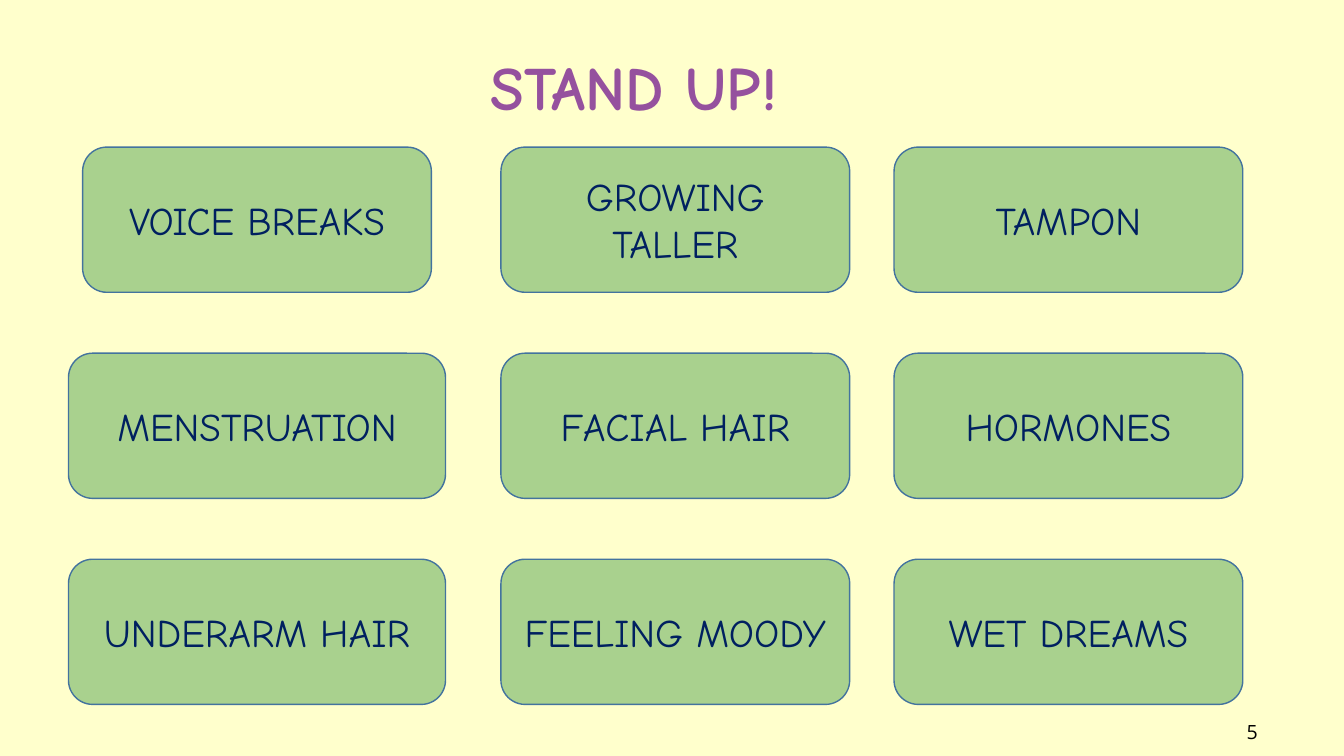
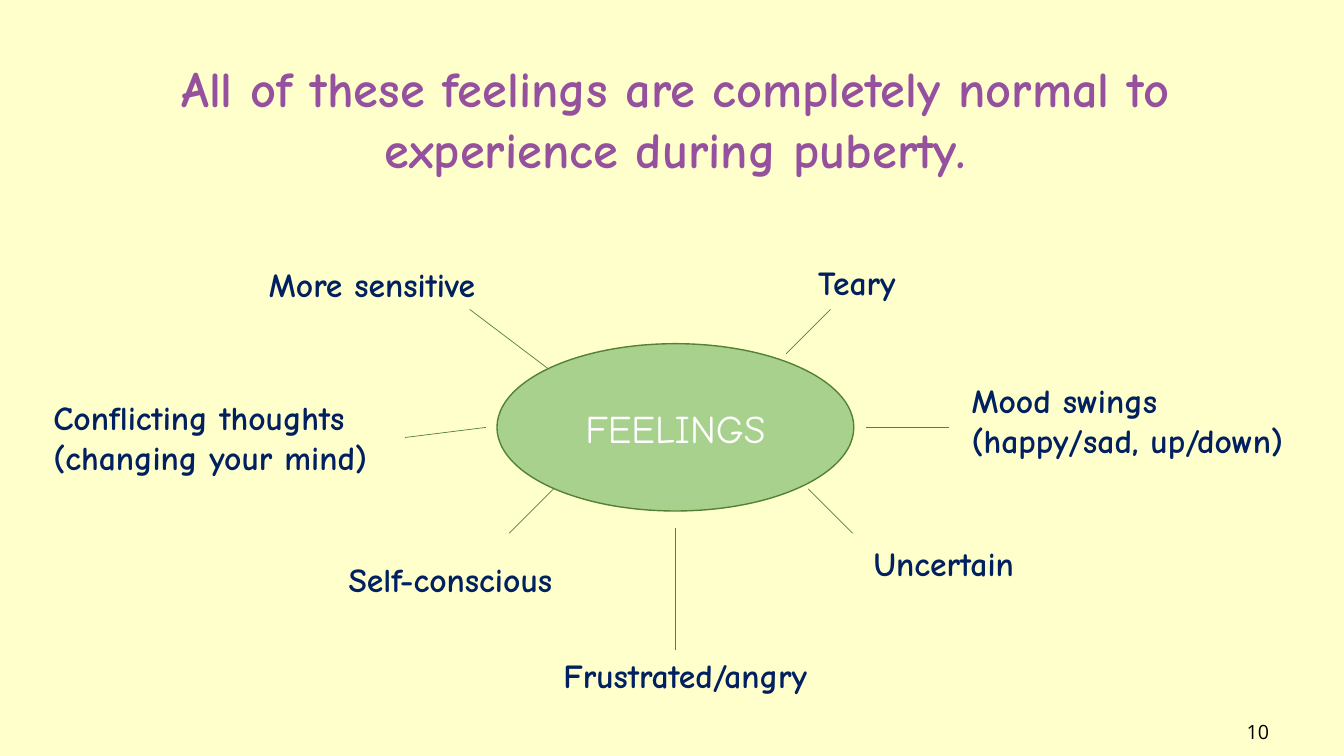
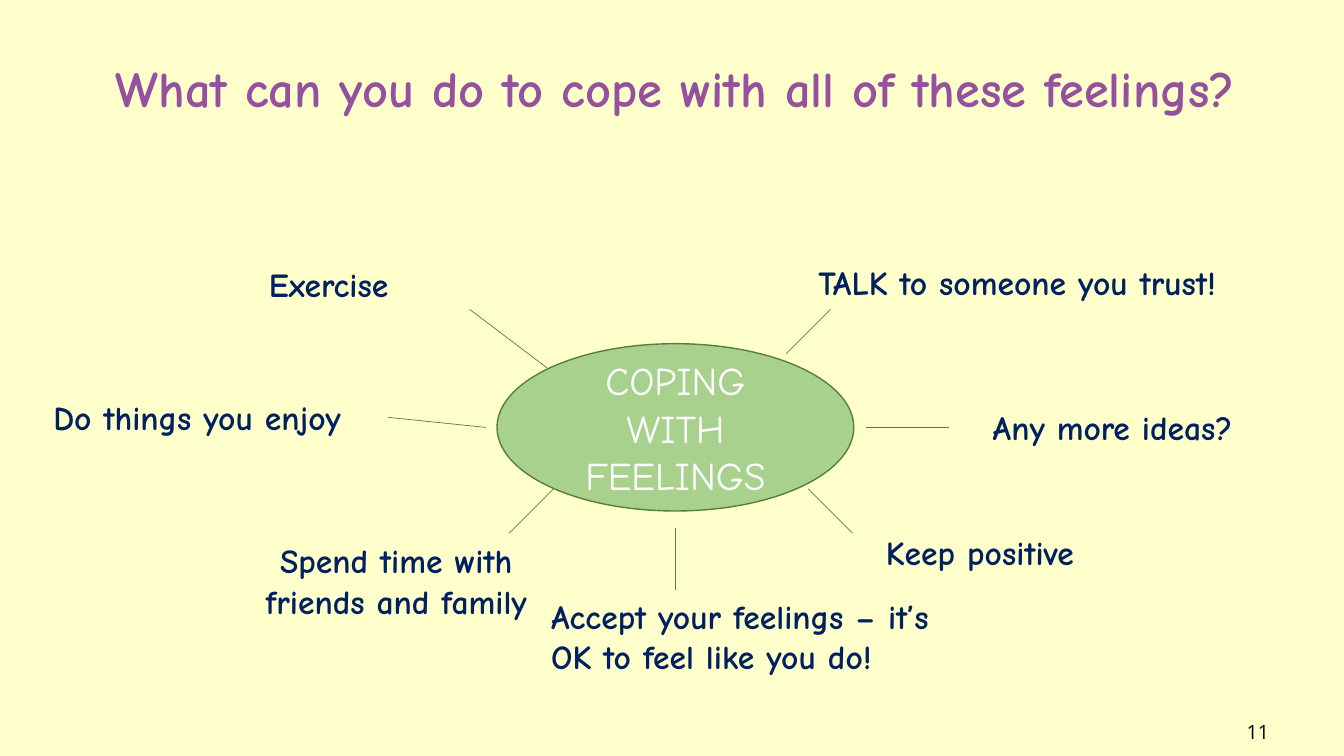
from dataclasses import dataclass

from lxml import etree
from pptx import Presentation
from pptx.dml import color
from pptx.enum import shapes, text
from pptx.oxml import ns
from pptx.util import Pt

HEADING_FONT = "Comic Neue"
NUMBER_FONT = "Open Sans"
CREAM = "FFFFCC"
PURPLE = "95519E"
NAVY = "002060"
LEAF = "A9D18E"
MOSS = "548235"
STEEL = "43739E"
WHITE = "FFFFFF"
BLACK = "000000"
LEFT = text.PP_ALIGN.LEFT
CENTER = text.PP_ALIGN.CENTER

Point = tuple[float, float]


@dataclass(frozen=True)
class Box:
    left: float
    top: float
    width: float
    height: float

    def lengths(self) -> list[Pt]:
        return [Pt(n) for n in (self.left, self.top, self.width, self.height)]


@dataclass(frozen=True)
class Style:
    size: float
    colour: str
    bold: bool = False
    font: str = HEADING_FONT
    align: text.PP_ALIGN = LEFT


@dataclass(frozen=True)
class Label:
    wording: str
    box: Box
    align: text.PP_ALIGN = LEFT


@dataclass(frozen=True)
class Spoke:
    start: Point
    end: Point


@dataclass(frozen=True)
class MindMap:
    title: str
    number: int
    hub: str
    labels: list[Label]
    left_spoke_end: Point
    bottom_spoke_end: float


QUIZ_TITLE_BOX = Box(31, 31.7, 843.8, 60.5)
MAP_TITLE_BOX = Box(60.5, 37.4, 843.8, 94.3)
NUMBER_BOX = Box(883.4, 510.5, 50.4, 28.8)
HUB_BOX = Box(355, 245.5, 254.9, 119.5)

BUTTON_TOP, BUTTON_PITCH, BUTTON_HEIGHT = 105.1, 147.2, 103.7
BUTTON_WIDTH, WIDE_BUTTON_WIDTH = 249.1, 269.3
COLUMN_CENTRES = (183.6, 482.4, 763.2)
BUTTON_ROWS = (
    ("VOICE BREAKS", "GROWING TALLER", "TAMPON"),
    ("MENSTRUATION", "FACIAL HAIR", "HORMONES"),
    ("UNDERARM HAIR", "FEELING MOODY", "WET DREAMS"),
)

SHARED_SPOKES = [
    Spoke((561.6, 252.7), (593.3, 221)),
    Spoke((391.7, 263.5), (335.5, 221)),
    Spoke((609.1, 380.9), (577.4, 349.2)),
    Spoke((363.6, 380.9), (395.3, 349.2)),
    Spoke((618.5, 305.3), (678.2, 305.3)),
]

MIND_MAPS = [
    MindMap(
        "All of these feelings are completely normal to experience during puberty.",
        10,
        "FEELINGS",
        [
            Label("More sensitive", Box(185, 185, 195, 36)),
            Label("Teary", Box(577.4, 183.6, 83.5, 36)),
            Label("Uncertain", Box(617, 384.5, 127.4, 36)),
            Label("Self-conscious", Box(241.9, 396, 185, 36)),
            Label("Mood swings\n(happy/sad, up/down)", Box(686.9, 267.8, 266.4, 65.5)),
            Label("Conflicting thoughts\n(changing your mind)", Box(31, 280, 259.2, 65.5)),
            Label("Frustrated/angry", Box(395.3, 464.4, 217.4, 36)),
        ],
        (289.4, 312.5),
        464.4,
    ),
    MindMap(
        "What can you do to cope with all of these feelings?",
        11,
        "COPING WITH FEELINGS",
        [
            Label("Exercise", Box(185, 185, 113.8, 36)),
            Label("TALK to someone you trust!", Box(577.4, 183.6, 342, 36)),
            Label("Keep positive", Box(625.7, 376.6, 167.8, 36)),
            Label("Spend time with friends and family", Box(179.3, 382.3, 207.4, 65.5), CENTER),
            Label("Any more ideas?", Box(702, 287.3, 209.5, 36)),
            Label("Do things you enjoy", Box(31, 280, 247, 36)),
            Label("Accept your feelings – it’s OK to feel like you do!", Box(386.6, 421.9, 291.6, 65.5)),
        ],
        (277.2, 298.1),
        421.2,
    ),
]


def rgb(value: str) -> color.RGBColor:
    return color.RGBColor.from_string(value)


def write(frame, wording: str, style: Style, anchor=text.MSO_ANCHOR.TOP) -> None:
    frame.text = wording
    frame.word_wrap = True
    frame.auto_size = text.MSO_AUTO_SIZE.NONE
    frame.vertical_anchor = anchor
    for paragraph in frame.paragraphs:
        paragraph.alignment = style.align
        paragraph.line_spacing = 1.0
        paragraph.font.name = style.font
        paragraph.font.size = Pt(style.size)
        paragraph.font.bold = style.bold
        paragraph.font.color.rgb = rgb(style.colour)


def add_text(slide, wording: str, box: Box, style: Style) -> None:
    write(slide.shapes.add_textbox(*box.lengths()).text_frame, wording, style)


def add_bubble(slide, preset, box: Box, wording: str, outline: str, ink: str) -> None:
    bubble = slide.shapes.add_shape(preset, *box.lengths())
    bubble.shadow.inherit = False
    bubble.fill.solid()
    bubble.fill.fore_color.rgb = rgb(LEAF)
    bubble.line.color.rgb = rgb(outline)
    bubble.line.width = Pt(1)
    style = Style(28, ink, align=CENTER)
    write(bubble.text_frame, wording, style, text.MSO_ANCHOR.MIDDLE)


def add_spoke(slide, spoke: Spoke) -> None:
    ends = [Pt(n) for n in spoke.start + spoke.end]
    line = slide.shapes.add_connector(shapes.MSO_CONNECTOR.STRAIGHT, *ends)
    line.line.color.rgb = rgb(MOSS)
    line.line.width = Pt(0.5)
    etree.SubElement(line._element.spPr, ns.qn("a:effectLst"))


def add_titled_slide(deck, wording: str, number: int, box: Box, size: float):
    slide = deck.slides.add_slide(deck.slide_layouts[5])
    title = slide.shapes.title
    title.left, title.top, title.width, title.height = box.lengths()
    write(title.text_frame, wording, Style(size, PURPLE, bold=True, align=CENTER))
    add_text(slide, str(number), NUMBER_BOX, Style(14, BLACK, font=NUMBER_FONT))
    return slide


def build_quiz(deck) -> None:
    slide = add_titled_slide(deck, "STAND UP!", 5, QUIZ_TITLE_BOX, 44)
    for row, words in enumerate(BUTTON_ROWS):
        for column, (centre, word) in enumerate(zip(COLUMN_CENTRES, words)):
            wide = column == 0 and row > 0
            width = WIDE_BUTTON_WIDTH if wide else BUTTON_WIDTH
            top = BUTTON_TOP + row * BUTTON_PITCH
            box = Box(centre - width / 2, top, width, BUTTON_HEIGHT)
            add_bubble(slide, shapes.MSO_SHAPE.ROUNDED_RECTANGLE, box, word, STEEL, NAVY)


def build_mind_map(deck, plan: MindMap) -> None:
    slide = add_titled_slide(deck, plan.title, plan.number, MAP_TITLE_BOX, 36)
    add_bubble(slide, shapes.MSO_SHAPE.OVAL, HUB_BOX, plan.hub, MOSS, WHITE)
    own_spokes = [
        Spoke((347, 305.3), plan.left_spoke_end),
        Spoke((482.4, 377.3), (482.4, plan.bottom_spoke_end)),
    ]
    for spoke in SHARED_SPOKES + own_spokes:
        add_spoke(slide, spoke)
    for label in plan.labels:
        style = Style(24, NAVY, bold=True, align=label.align)
        add_text(slide, label.wording, label.box, style)


def main() -> None:
    deck = Presentation()
    deck.slide_width, deck.slide_height = Pt(960), Pt(540)
    backdrop = deck.slide_master.background.fill
    backdrop.solid()
    backdrop.fore_color.rgb = rgb(CREAM)
    build_quiz(deck)
    for plan in MIND_MAPS:
        build_mind_map(deck, plan)
    deck.save("out.pptx")


if __name__ == "__main__":
    main()
